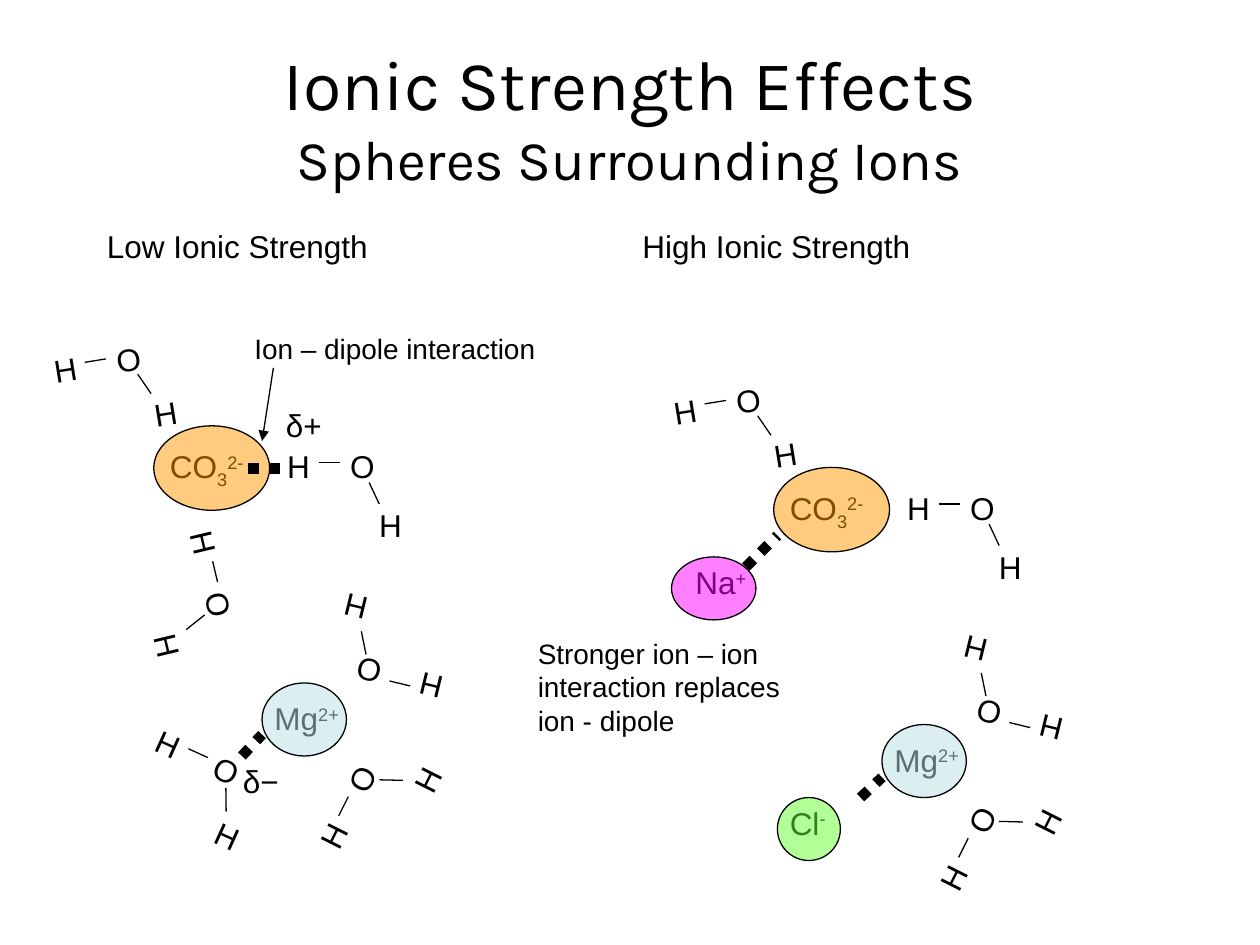
import pptx
import pptx.util
import pptx.dml.color
import pptx.enum.dml
import pptx.enum.shapes
import pptx.enum.text
import pptx.oxml
import pptx.oxml.ns

Inches = pptx.util.Inches
Pt = pptx.util.Pt
RGBColor = pptx.dml.color.RGBColor
qn = pptx.oxml.ns.qn

BLACK = RGBColor(0x00, 0x00, 0x00)
PALE_BLUE = RGBColor(0xBB, 0xE0, 0xE3)
ORANGE = RGBColor(0xFF, 0x99, 0x00)
MAGENTA = RGBColor(0xFF, 0x00, 0xFF)
GREEN = RGBColor(0x66, 0xFF, 0x33)


def add_text(shapes, text, x, y, w, h=0.4, size=18, font="Arial", align=None,
             anchor=pptx.enum.text.MSO_ANCHOR.TOP):
    """Text is a string or a list of (string, baseline percent) runs."""
    sp = shapes.add_textbox(Inches(x), Inches(y), Inches(w), Inches(h))
    tf = sp.text_frame
    tf.word_wrap = True
    tf.vertical_anchor = anchor
    p = tf.paragraphs[0]
    p.alignment = align
    for part, baseline in [(text, 0)] if isinstance(text, str) else text:
        r = p.add_run()
        r.text = part
        r.font.name = font
        r.font.size = Pt(size)
        r.font.color.rgb = BLACK
        if baseline:
            r._r.get_or_add_rPr().set("baseline", str(baseline * 1000))
    return p


def add_line(shapes, x1, y1, x2, y2, width=0.75, dotted=False, arrow=False):
    sp = shapes.add_connector(pptx.enum.shapes.MSO_CONNECTOR.STRAIGHT,
                              Inches(x1), Inches(y1), Inches(x2), Inches(y2))
    sp.line.color.rgb = BLACK
    sp.line.width = Pt(width)
    if dotted:
        sp.line.dash_style = pptx.enum.dml.MSO_LINE.ROUND_DOT
    if arrow:
        end = pptx.oxml.parse_xml(
            f'<a:tailEnd {pptx.oxml.ns.nsdecls("a")} type="triangle"/>')
        sp.line._get_or_add_ln().append(end)
    sp._element.spPr.append(pptx.oxml.parse_xml(
        f'<a:effectLst {pptx.oxml.ns.nsdecls("a")}/>'))


prs = pptx.Presentation()
prs.slide_width = Inches(10)
prs.slide_height = Inches(7.5)
s = prs.slides.add_slide(prs.slide_layouts[6])

# Title and subtitle in one centred paragraph
p = add_text(s.shapes, "Ionic Strength Effects", 0.5, 0.3, 9, 1.25, size=40,
             font="Karla", align=pptx.enum.text.PP_ALIGN.CENTER,
             anchor=pptx.enum.text.MSO_ANCHOR.MIDDLE)
p.add_line_break()
r = p.add_run()
r.text = "Spheres Surrounding Ions"
r.font.name = "Karla"
r.font.size = Pt(32)
r.font.color.rgb = BLACK

# Column headings
add_text(s.shapes, "Low Ionic Strength", 0.75, 1.75, 2.75)
add_text(s.shapes, "High Ionic Strength", 5, 1.75, 3.83)

# The right-hand system is the left-hand one, shifted
DX, DY = 4.92, 0.33
magnesium = [("Mg", 0), ("2+", 30)]
carbonate = [("CO", 0), ("3", -25), ("2-", 30)]

# Ions: runs, text x, y, width, then ellipse x, y, width, height, colour
ions = [
    ([("Na", 0), ("+", 30)], 5.42, 4.42, 0.75, 5.33, 4.42, 0.67, 0.5, MAGENTA),
    ([("Cl", 0), ("-", 30)], 6.17, 6.33, 0.5, 6.17, 6.33, 0.5, 0.5, GREEN),
]
for dx, dy in [(0, 0), (DX, DY)]:
    ions += [
        (magnesium, 2.08 + dx, 5.5 + dy, 0.75,
         2.08 + dx, 5.42 + dy, 0.67, 0.58, PALE_BLUE),
        (carbonate, 1.25 + dx, 3.5 + dy, 0.83,
         1.22 + dx, 3.38 + dy, 0.92, 0.67, ORANGE),
    ]
for runs, tx, ty, tw, x, y, w, h, color in ions:
    add_text(s.shapes, runs, tx, ty, tw)
    sp = s.shapes.add_shape(pptx.enum.shapes.MSO_SHAPE.OVAL,
                            Inches(x), Inches(y), Inches(w), Inches(h))
    sp.shadow.inherit = False
    sp.fill.solid()
    sp.fill.fore_color.rgb = color
    clr = sp._element.spPr.find(qn("a:solidFill")).find(qn("a:srgbClr"))
    clr.append(pptx.oxml.parse_xml(
        f'<a:alpha {pptx.oxml.ns.nsdecls("a")} val="50000"/>'))
    sp.line.color.rgb = BLACK
    sp.line.width = Pt(0.75)

# Water molecules: group centre x, y and rotation
left_waters = [
    (2.92, 3.94, 0),
    (1.10, 3.08, 350.8),
    (3.10, 6.25, 296.6),
    (2.94, 5.10, 193.7),
]
waters = left_waters + [(x + DX, y + DY, turn) for x, y, turn in left_waters]
waters += [(1.52, 4.90, 76.6), (1.74, 6.35, 24.5)]
for cx, cy, turn in waters:
    x, y = cx - 0.74, cy - 0.44
    group = s.shapes.add_group_shape()
    add_text(group.shapes, "H", x, y, 0.58)
    add_line(group.shapes, x + 0.35, y + 0.17, x + 0.52, y + 0.17)
    add_text(group.shapes, "O", x + 0.5, y, 0.42)
    add_line(group.shapes, x + 0.75, y + 0.33, x + 0.83, y + 0.5)
    add_text(group.shapes, "H", x + 0.73, y + 0.47, 0.75)
    group.rotation = turn

# Partial charges
add_text(s.shapes, "δ+", 2.17, 3.17, 0.58)
add_text(s.shapes, "δ−", 1.83, 6, 0.58)

# Dotted attractions between charges
for x1, y1, x2, y2 in [(1.97, 3.72, 2.31, 3.72), (1.92, 6, 2.08, 5.83),
                       (6.83, 6.33, 7, 6.17), (5.92, 4.5, 6.17, 4.25)]:
    add_line(s.shapes, x1, y1, x2, y2, width=6, dotted=True)

# Notes on the interactions
add_line(s.shapes, 2.17, 2.92, 2.08, 3.5, arrow=True)
add_text(s.shapes, "Ion – dipole interaction", 1.92, 2.58, 2.5, 0.37, size=16)
add_text(s.shapes, "Stronger ion – ion interaction replaces ion - dipole",
         4.17, 5, 2.33, 0.9, size=16)

prs.save("out.pptx")
